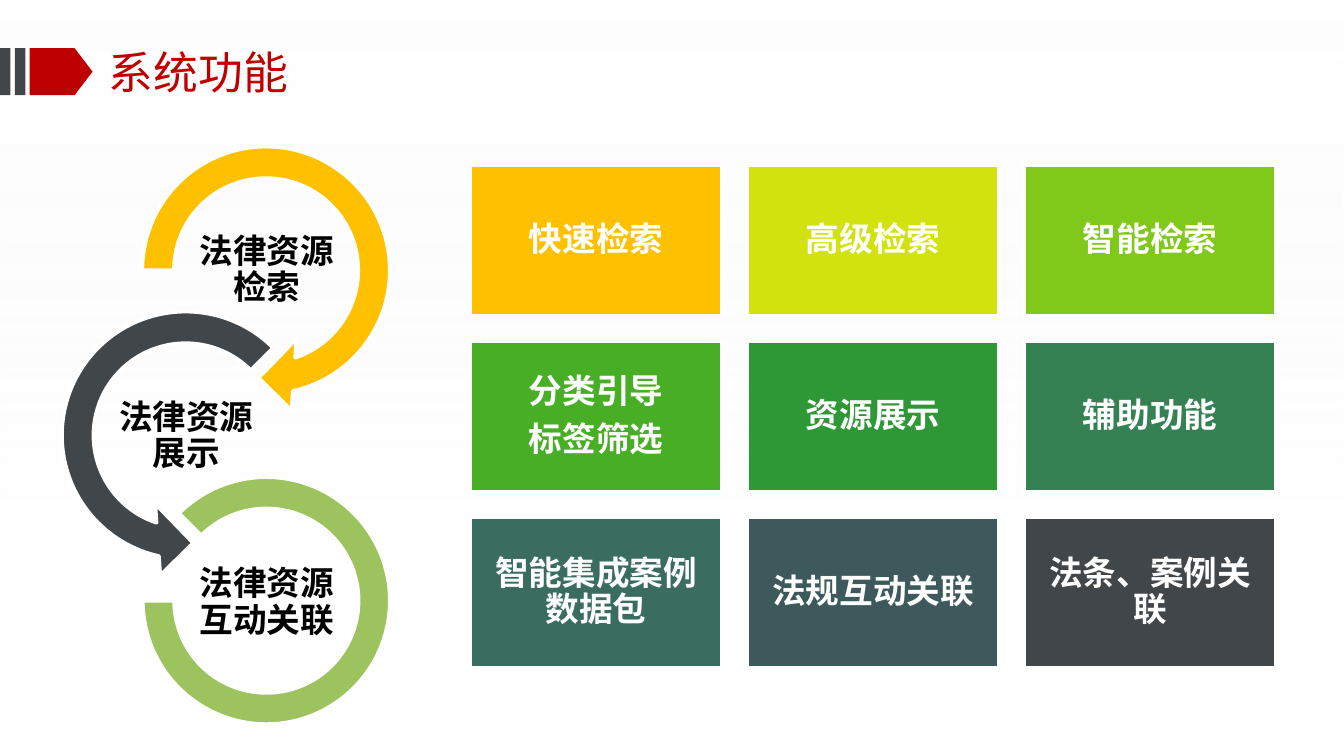
from dataclasses import dataclass

from lxml import etree
from pptx import Presentation
from pptx.dml.color import RGBColor
from pptx.enum.shapes import MSO_SHAPE
from pptx.enum.text import MSO_ANCHOR, PP_ALIGN
from pptx.oxml.ns import qn
from pptx.util import Cm, Pt

RECT = MSO_SHAPE.RECTANGLE
PENTAGON = MSO_SHAPE.PENTAGON
RIGHT_ARROW = MSO_SHAPE.CIRCULAR_ARROW
LEFT_ARROW = MSO_SHAPE.LEFT_CIRCULAR_ARROW
BLOCK_ARC = MSO_SHAPE.BLOCK_ARC
MIDDLE = MSO_ANCHOR.MIDDLE
LEFT, CENTER = PP_ALIGN.LEFT, PP_ALIGN.CENTER


@dataclass(frozen=True)
class Theme:
    font: str = "Noto Sans CJK SC"
    title_size: int = 24
    body_size: int = 18
    white: str = "FFFFFF"
    black: str = "000000"
    pale: str = "F2F2F2"
    dark: str = "40464A"
    red: str = "BD0000"
    title: str = "C00000"
    amber: str = "FFC000"
    leaf: str = "9CC35D"
    tiles: tuple = ("FFC000", "D1E20E", "80C81A", "48AE25", "2E9736",
                    "358154", "3A6D60", "3E595B", "40464A")


THEME = Theme()
TILE_TEXTS = ["快速检索", "高级检索", "智能检索",
              "分类引导\n标签筛选", "资源展示", "辅助功能",
              "智能集成案例数据包", "法规互动关联", "法条、案例关联"]


def rgb(value):
    return RGBColor.from_string(value)


def add_shape(slide, kind, box, color, outline=None, adjustments=()):
    sp = slide.shapes.add_shape(kind, *map(Cm, box))
    sp.shadow.inherit = False
    sp.fill.solid()
    sp.fill.fore_color.rgb = rgb(color)
    if outline:
        sp.line.color.rgb = rgb(outline)
        sp.line.width = Pt(2)
    else:
        sp.line.fill.background()
    for i, value in enumerate(adjustments):
        sp.adjustments[i] = value
    return sp


def write(sp, text, color, size, inset=0, align=CENTER, bold=True):
    """Fill a shape with text, setting Latin and East Asian fonts alike."""
    tf = sp.text_frame
    tf.word_wrap = True
    tf.vertical_anchor = MIDDLE
    tf.margin_left = tf.margin_right = Cm(inset)
    tf.margin_top = tf.margin_bottom = Cm(inset)
    tf.text = text
    for p in tf.paragraphs:
        p.alignment = align
        if bold:
            p.line_spacing = 0.9
            p.space_after = Pt(0.35 * size)
        for r in p.runs:
            r.font.name = THEME.font
            r.font.size = Pt(size)
            r.font.bold = bold
            r.font.color.rgb = rgb(color)
            ea = etree.SubElement(r.font._element, qn("a:ea"))
            ea.set("typeface", THEME.font)


def add_backdrop(slide, box):
    """Cover the box with a translucent gradient running downwards."""
    sp = add_shape(slide, RECT, box, THEME.white)
    sp.fill.gradient()
    sp.fill.gradient_angle = 270
    looks = [(0, THEME.white, 55), (0.71, THEME.pale, 0)]
    for stop, (position, color, opacity) in zip(sp.fill.gradient_stops, looks):
        stop.position = position
        stop.color.rgb = rgb(color)
    for clr, look in zip(sp._element.spPr.iter(qn("a:srgbClr")), looks):
        etree.SubElement(clr, qn("a:alpha")).set("val", str(look[2] * 1000))


def add_header(slide, box, text):
    x, y, w, h = box
    mark_y, mark_h = y + 0.15, 0.89
    add_shape(slide, PENTAGON, (x + 0.56, mark_y, 1.19, mark_h), THEME.red,
              adjustments=[0.382])
    for i in range(2):
        add_shape(slide, RECT, (x + 0.28 * i, mark_y, 0.2, mark_h), THEME.dark)
    title = slide.shapes.add_textbox(Cm(x + 2.06), Cm(y), Cm(w - 2.06), Cm(h))
    write(title, text, THEME.title, THEME.title_size, align=LEFT, bold=False)


def add_cycle(slide, box):
    """Stack three interlocking rings, alternating right and left."""
    x, y, w, h = box
    arrow, arc = 5.44, 4.67
    label_w, label_h, pitch = 3.02, 1.5, 3.14
    right = w - arrow + 0.38
    rings = [
        ("法律资源检索", RIGHT_ARROW, (right, 0, arrow), THEME.amber,
         [0.11, 11.423, 45, 108, 0.125]),
        ("法律资源展示", LEFT_ARROW, (0, 3.12, arrow), THEME.dark,
         [0.11, 11.423, 63, 189, 0.125]),
        ("法律资源互动关联", BLOCK_ARC, (w - arc, h - arc, arc), THEME.leaf,
         [135, 108, 0.127]),
    ]
    for i, (text, kind, (dx, dy, size), color, adjustments) in enumerate(rings):
        add_shape(slide, kind, (x + dx, y + dy, size, size), color,
                  THEME.white, adjustments)
        label_x = x + 1.22 + (0 if i == 1 else right)
        label = slide.shapes.add_textbox(
            Cm(label_x), Cm(y + 1.98 + i * pitch), Cm(label_w), Cm(label_h))
        write(label, text, THEME.black, THEME.body_size, inset=0.03)


def add_tiles(slide, box, columns=3, gap=0.48):
    x, y, w, h = box
    rows = len(TILE_TEXTS) // columns
    tile_w = (w - gap * (columns - 1)) / columns
    tile_h = (h - gap * (rows - 1)) / rows
    for i, (text, color) in enumerate(zip(TILE_TEXTS, THEME.tiles)):
        row, col = divmod(i, columns)
        place = (x + col * (tile_w + gap), y + row * (tile_h + gap),
                 tile_w, tile_h)
        sp = add_shape(slide, RECT, place, color, THEME.white)
        write(sp, text, THEME.white, THEME.body_size, inset=0.18)


def main():
    prs = Presentation()
    prs.slide_width, prs.slide_height = Cm(25.4), Cm(14.29)
    slide = prs.slides.add_slide(prs.slide_layouts[6])
    add_backdrop(slide, (0, 0, 25.4, 14.29))
    add_header(slide, (0, 0.76, 14.5, 1.19), "系统功能")
    add_cycle(slide, (0.79, 2.39, 6.58, 11.3))
    add_tiles(slide, (8.89, 3.12, 15.22, 9.5))
    prs.save("out.pptx")


if __name__ == "__main__":
    main()
